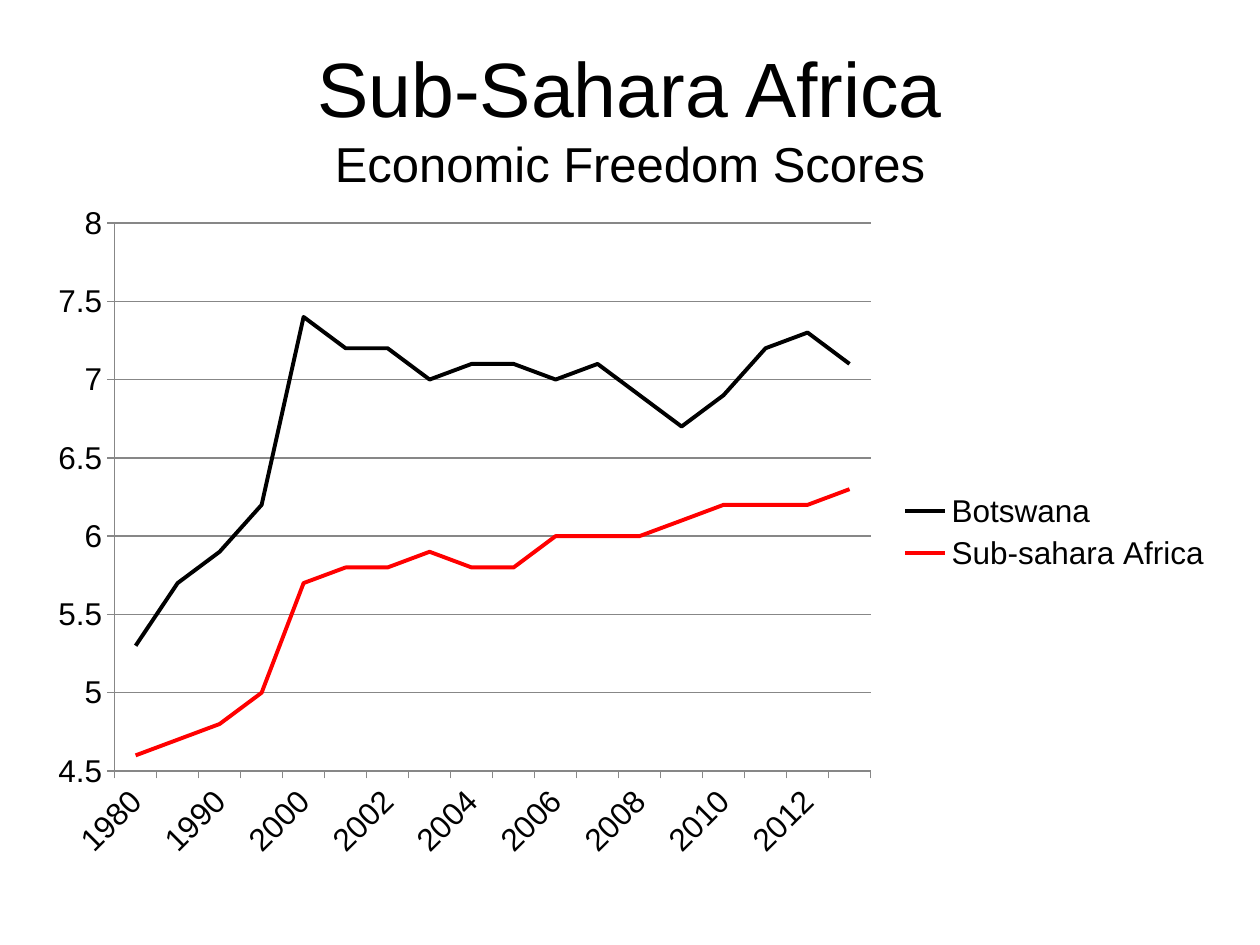
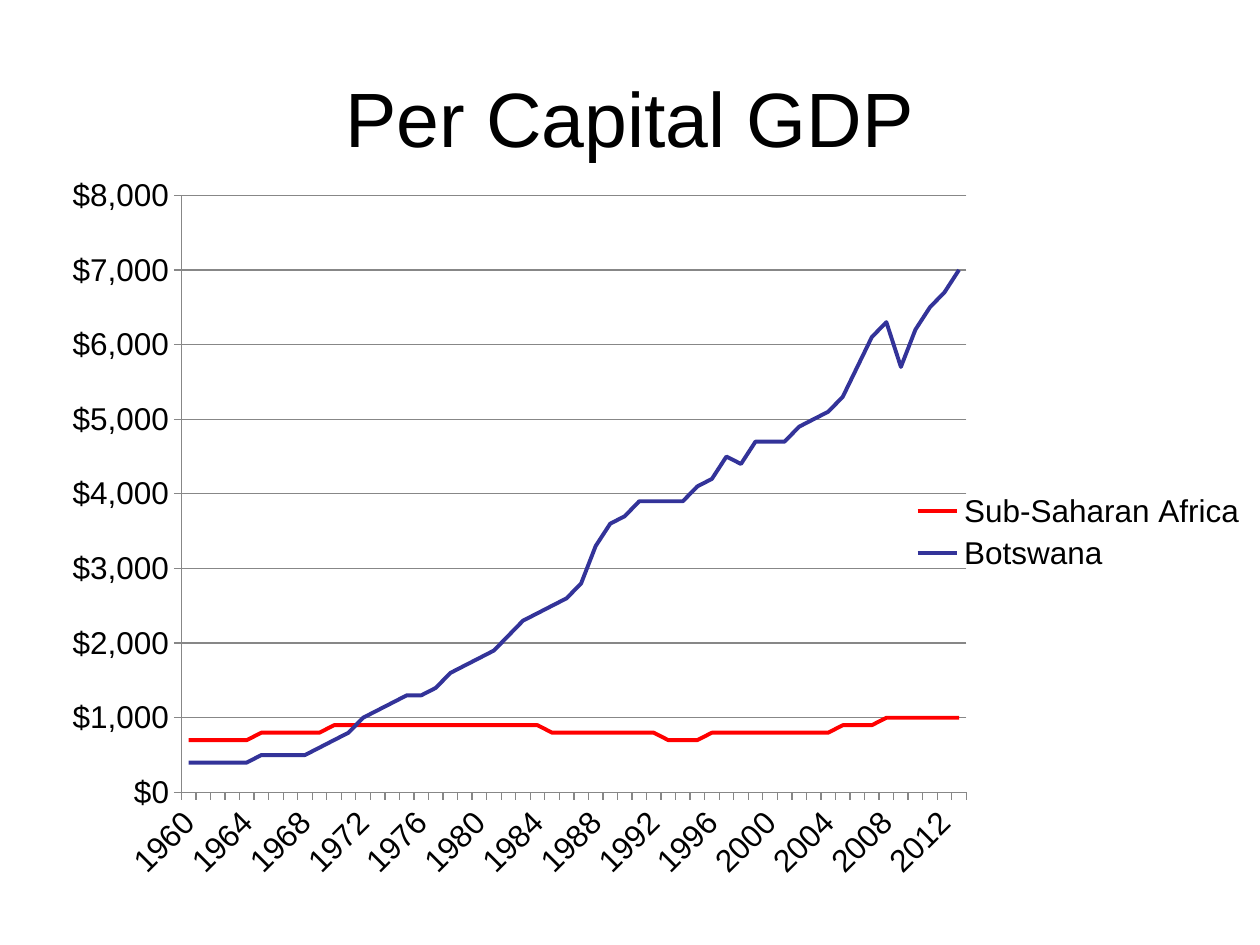
"""Build two slides of line charts on growth and freedom in Africa."""
from dataclasses import dataclass

from lxml.etree import SubElement
from pptx import Presentation
from pptx.chart.axis import CategoryAxis, ValueAxis
from pptx.chart.chart import Chart
from pptx.chart.data import CategoryChartData
from pptx.dml.color import RGBColor
from pptx.enum.chart import XL_CHART_TYPE, XL_LEGEND_POSITION, XL_TICK_MARK
from pptx.enum.text import MSO_ANCHOR, PP_ALIGN
from pptx.oxml.ns import qn
from pptx.slide import Slide
from pptx.util import Emu, Pt

BLACK = RGBColor(0x00, 0x00, 0x00)
RED = RGBColor(0xFF, 0x00, 0x00)
BLUE = RGBColor(0x33, 0x33, 0x99)
GRAY = RGBColor(0x87, 0x87, 0x87)
FONT = "Arial"
SCALE = 9144


@dataclass(frozen=True)
class Box:
    """A place on the slide, in px of a hundredth of an inch."""
    left: int
    top: int
    width: int
    height: int

    def emu(self) -> tuple[Emu, ...]:
        """Return the place in EMU."""
        sides = (self.left, self.top, self.width, self.height)
        return tuple(Emu(side * SCALE) for side in sides)


@dataclass(frozen=True)
class Line:
    """One series of a chart."""
    name: str
    color: RGBColor
    values: list[float]


@dataclass(frozen=True)
class Page:
    """One slide: its title lines with sizes and its chart."""
    title: list[tuple[str, int]]
    box: Box
    plot: Box
    years: list[int]
    lines: list[Line]
    low: float
    high: float
    step: float
    form: str


TITLE = Box(50, 30, 900, 125)

PAGES = [
    Page(
        [("Sub-Sahara Africa", 44), ("Economic Freedom Scores", 28)],
        Box(28, 153, 944, 539), Box(91, 177, 600, 435),
        [*range(1980, 2000, 5), *range(2000, 2014)],
        [
            Line("Botswana", BLACK,
                 [5.3, 5.7, 5.9, 6.2, 7.4, 7.2, 7.2, 7, 7.1,
                  7.1, 7, 7.1, 6.9, 6.7, 6.9, 7.2, 7.3, 7.1]),
            Line("Sub-sahara Africa", RED,
                 [4.6, 4.7, 4.8, 5, 5.7, 5.8, 5.8, 5.9, 5.8,
                  5.8, 6, 6, 6, 6.1, 6.2, 6.2, 6.2, 6.3]),
        ],
        4.5, 8, 0.5, "General",
    ),
    Page(
        [("Per Capital GDP", 44)],
        Box(0, 125, 1000, 595), Box(144, 155, 623, 474),
        [*range(1960, 2014)],
        [
            Line("Sub-Saharan Africa", RED,
                 [700] * 5 + [800] * 5 + [900] * 15 + [800] * 8 + [700] * 3
                 + [800] * 9 + [900] * 3 + [1000] * 6),
            Line("Botswana", BLUE,
                 [400, 400, 400, 400, 400, 500, 500, 500, 500,
                  600, 700, 800, 1000, 1100, 1200, 1300, 1300, 1400,
                  1600, 1700, 1800, 1900, 2100, 2300, 2400, 2500, 2600,
                  2800, 3300, 3600, 3700, 3900, 3900, 3900, 3900, 4100,
                  4200, 4500, 4400, 4700, 4700, 4700, 4900, 5000, 5100,
                  5300, 5700, 6100, 6300, 5700, 6200, 6500, 6700, 7000]),
        ],
        0, 8000, 1000, r"\$#,##0",
    ),
]


def add_title(slide: Slide, parts: list[tuple[str, int]]) -> None:
    """Write the title lines, centred, in one paragraph."""
    frame = slide.shapes.add_textbox(*TITLE.emu()).text_frame
    frame.word_wrap = True
    frame.vertical_anchor = MSO_ANCHOR.MIDDLE
    para = frame.paragraphs[0]
    para.alignment = PP_ALIGN.CENTER
    para.font.name = FONT
    para.font.color.rgb = BLACK
    for index, (text, size) in enumerate(parts):
        if index:
            para.add_line_break()
        run = para.add_run()
        run.text = text
        run.font.size = Pt(size)


def set_plot(chart: Chart, box: Box, plot: Box) -> None:
    """Fix the inner plot area as shares of the chart box."""
    area = chart._chartSpace.chart.plotArea
    for old in area.findall(qn("c:layout")):
        area.remove(old)
    layout = SubElement(area, qn("c:layout"))
    area.insert(0, layout)
    manual = SubElement(layout, qn("c:manualLayout"))
    marks = {
        "layoutTarget": "inner", "xMode": "edge", "yMode": "edge",
        "x": (plot.left - box.left) / box.width,
        "y": (plot.top - box.top) / box.height,
        "w": plot.width / box.width,
        "h": plot.height / box.height,
    }
    for name, value in marks.items():
        SubElement(manual, qn(f"c:{name}")).set("val", str(value))


def style_axis(axis: CategoryAxis | ValueAxis) -> None:
    """Give an axis a thin gray line and outer ticks."""
    axis.major_tick_mark = XL_TICK_MARK.OUTSIDE
    axis.minor_tick_mark = XL_TICK_MARK.NONE
    axis.format.line.color.rgb = GRAY
    axis.format.line.width = Pt(0.75)


def add_chart(slide: Slide, page: Page) -> None:
    """Draw the line chart of a page."""
    data = CategoryChartData(number_format=page.form)
    data.categories = [str(year) for year in page.years]
    for line in page.lines:
        data.add_series(line.name, line.values)
    frame = slide.shapes.add_chart(XL_CHART_TYPE.LINE, *page.box.emu(), data)
    chart = frame.chart
    chart.has_title = False
    chart.font.name = FONT
    chart.font.size = Pt(18)
    chart.font.color.rgb = BLACK
    chart.has_legend = True
    chart.legend.position = XL_LEGEND_POSITION.RIGHT
    chart.legend.include_in_layout = False
    set_plot(chart, page.box, page.plot)

    years, scores = chart.category_axis, chart.value_axis
    for axis in (years, scores):
        style_axis(axis)
        font = axis.tick_labels.font
        font.name = FONT
        font.size = Pt(18)
        font.color.rgb = BLACK
    years._element.txPr.bodyPr.set("rot", "-2700000")
    scores.minimum_scale = page.low
    scores.maximum_scale = page.high
    scores.major_unit = page.step
    scores.tick_labels.number_format = page.form
    scores.tick_labels.number_format_is_linked = False
    scores.has_major_gridlines = True
    grid = scores.major_gridlines.format.line
    grid.color.rgb = GRAY
    grid.width = Pt(0.75)

    chart.plots[0].vary_by_categories = False
    for series, line in zip(chart.plots[0].series, page.lines):
        series.smooth = False
        series.format.line.color.rgb = line.color
        series.format.line.width = Pt(2.25)


def main() -> None:
    """Build the slides and save them."""
    deck = Presentation()
    deck.slide_width = Emu(1000 * SCALE)
    deck.slide_height = Emu(750 * SCALE)
    for page in PAGES:
        slide = deck.slides.add_slide(deck.slide_layouts[6])
        add_title(slide, page.title)
        add_chart(slide, page)
    deck.save("out.pptx")


if __name__ == "__main__":
    main()
